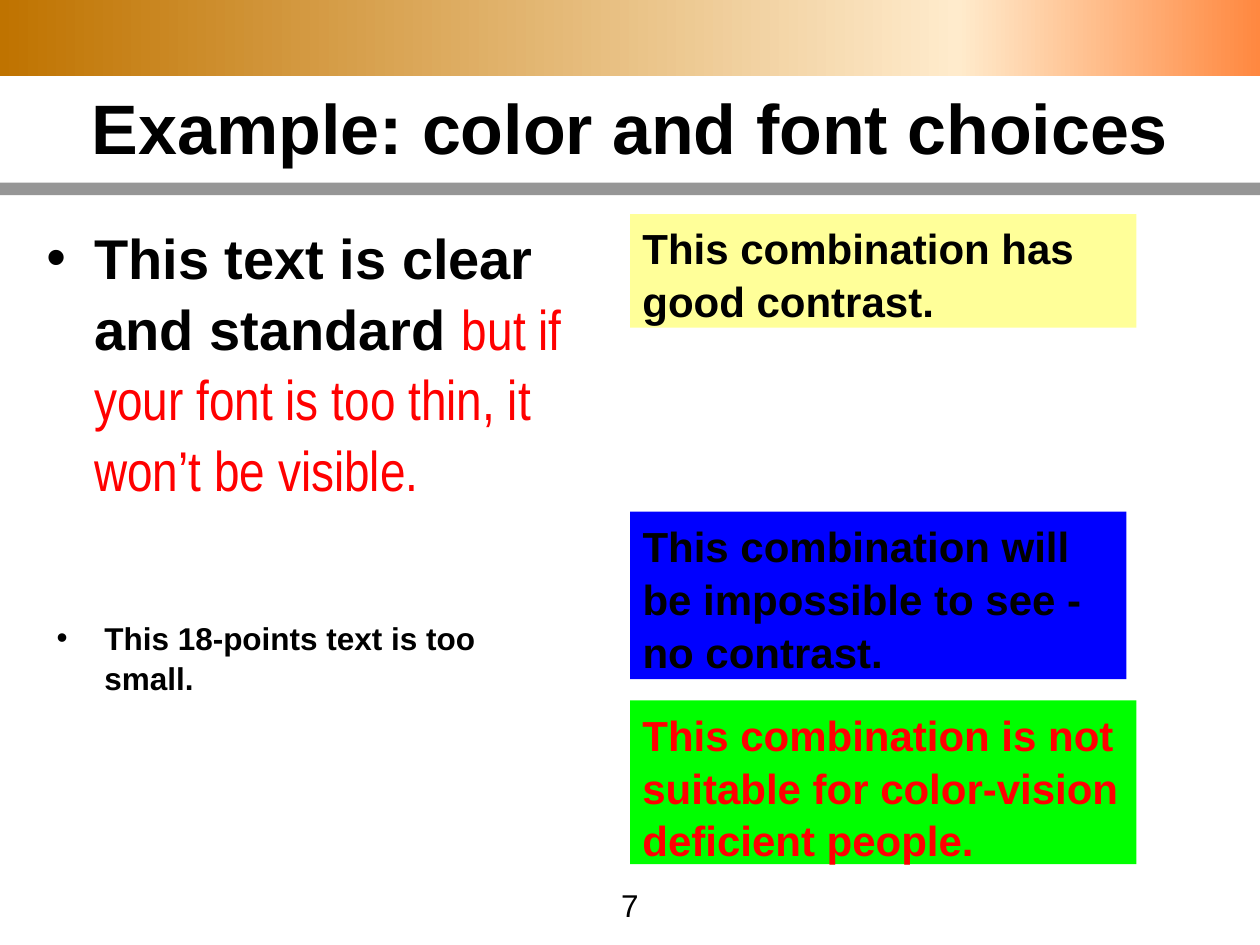
from copy import deepcopy

from lxml.etree import SubElement
from pptx import Presentation
from pptx.dml.color import RGBColor
from pptx.enum.shapes import MSO_SHAPE as Shape
from pptx.enum.text import MSO_ANCHOR as Anchor, MSO_AUTO_SIZE as AutoSize, PP_ALIGN as Align
from pptx.oxml.ns import qn
from pptx.util import Inches, Pt

BLACK, RED = "000000", "FF0000"
LINE_SPACING = 1.05


def color(hex_value):
    return RGBColor.from_string(hex_value)


def place(shape, box):
    shape.left, shape.top, shape.width, shape.height = map(Inches, box)


def style(run, size, hex_value=BLACK, bold=True, name="Arial"):
    run.font.size = Pt(size)
    run.font.bold = bold
    run.font.name = name
    run.font.color.rgb = color(hex_value)


def add_bar(slide, box):
    bar = slide.shapes.add_shape(Shape.RECTANGLE, *map(Inches, box))
    bar.shadow.inherit = False
    bar.line.fill.background()
    return bar


def add_header(slide, width):
    banner = add_bar(slide, (0, 0, width, 0.6))
    banner.fill.gradient()
    banner.fill.gradient_angle = 0
    stop_list = banner._element.spPr.find(qn("a:gradFill")).find(qn("a:gsLst"))
    stop_list.append(deepcopy(stop_list[-1]))
    stops = ((0, "BF7300"), (0.76, "FFEBCC"), (1, "FF8840"))
    for stop, (position, hex_value) in zip(banner.fill.gradient_stops, stops):
        stop.position = position
        stop.color.rgb = color(hex_value)

    rule = add_bar(slide, (0, 1.45, width, 0.1))
    rule.fill.solid()
    rule.fill.fore_color.rgb = color("969696")


def fill_title(title, box):
    place(title, box)
    frame = title.text_frame
    frame.text = "Example: color and font choices"
    frame.auto_size = AutoSize.NONE
    frame.vertical_anchor = Anchor.MIDDLE
    frame.paragraphs[0].alignment = Align.CENTER
    style(frame.paragraphs[0].runs[0], 40)


def add_text_box(slide, box):
    text_box = slide.shapes.add_textbox(*map(Inches, box))
    text_box.text_frame.word_wrap = True
    return text_box


def add_bullet_text(slide, box, size, runs):
    paragraph = add_text_box(slide, box).text_frame.paragraphs[0]
    properties = paragraph._p.get_or_add_pPr()
    properties.set("marL", str(Inches(0.38)))
    properties.set("indent", str(-Inches(0.38)))
    SubElement(properties, qn("a:buFont"), typeface="Arial")
    SubElement(properties, qn("a:buChar"), char="•")
    paragraph.line_spacing = LINE_SPACING
    for text, formatting in runs:
        run = paragraph.add_run()
        run.text = text
        style(run, size, **formatting)


def fill_sample(shape, box, text, background, text_color=BLACK):
    place(shape, box)
    shape.fill.solid()
    shape.fill.fore_color.rgb = color(background)
    frame = shape.text_frame
    frame.text = text
    frame.word_wrap = True
    frame.auto_size = AutoSize.NONE
    frame.vertical_anchor = Anchor.TOP
    paragraph = frame.paragraphs[0]
    properties = paragraph._p.get_or_add_pPr()
    properties.set("marL", "0")
    properties.set("indent", "0")
    SubElement(properties, qn("a:buNone"))
    paragraph.line_spacing = LINE_SPACING
    paragraph.space_before = Pt(0)
    style(paragraph.runs[0], 24, text_color)


def add_slide_number(slide, box):
    frame = add_text_box(slide, box).text_frame
    frame.text = "7"
    frame.paragraphs[0].alignment = Align.CENTER
    style(frame.paragraphs[0].runs[0], 18, bold=False)


def main():
    presentation = Presentation()
    presentation.slide_width = Inches(10)
    presentation.slide_height = Inches(7.5)
    slide = presentation.slides.add_slide(presentation.slide_layouts[1])

    add_header(slide, 10)
    fill_title(slide.shapes.title, (0, 0.59, 10, 0.83))
    add_bullet_text(slide, (0.27, 1.7, 4.49, 2.52), 32, (
        ("This text is clear and standard ", {}),
        ("but if your font is too thin, it won’t be visible.",
         {"hex_value": RED, "bold": False, "name": "Arial Narrow"}),
    ))
    add_bullet_text(slide, (0.35, 4.85, 3.62, 0.47), 18,
                    (("This 18-points text is too small.", {}),))

    good_box, bad_box = (5, 1.7, 4.02, 0.9), (5, 5.56, 4.02, 1.3)
    fill_sample(add_text_box(slide, good_box), good_box,
                "This combination has good contrast.", "FFFF99")
    fill_sample(slide.placeholders[1], (5, 4.06, 3.94, 1.33),
                "This combination will be impossible to see - no contrast.", "0000FF")
    fill_sample(add_text_box(slide, bad_box), bad_box,
                "This combination is not suitable for color-vision deficient people.",
                "00FF00", RED)
    add_slide_number(slide, (0.75, 6.98, 8.5, 0.35))
    presentation.save("out.pptx")


if __name__ == "__main__":
    main()
